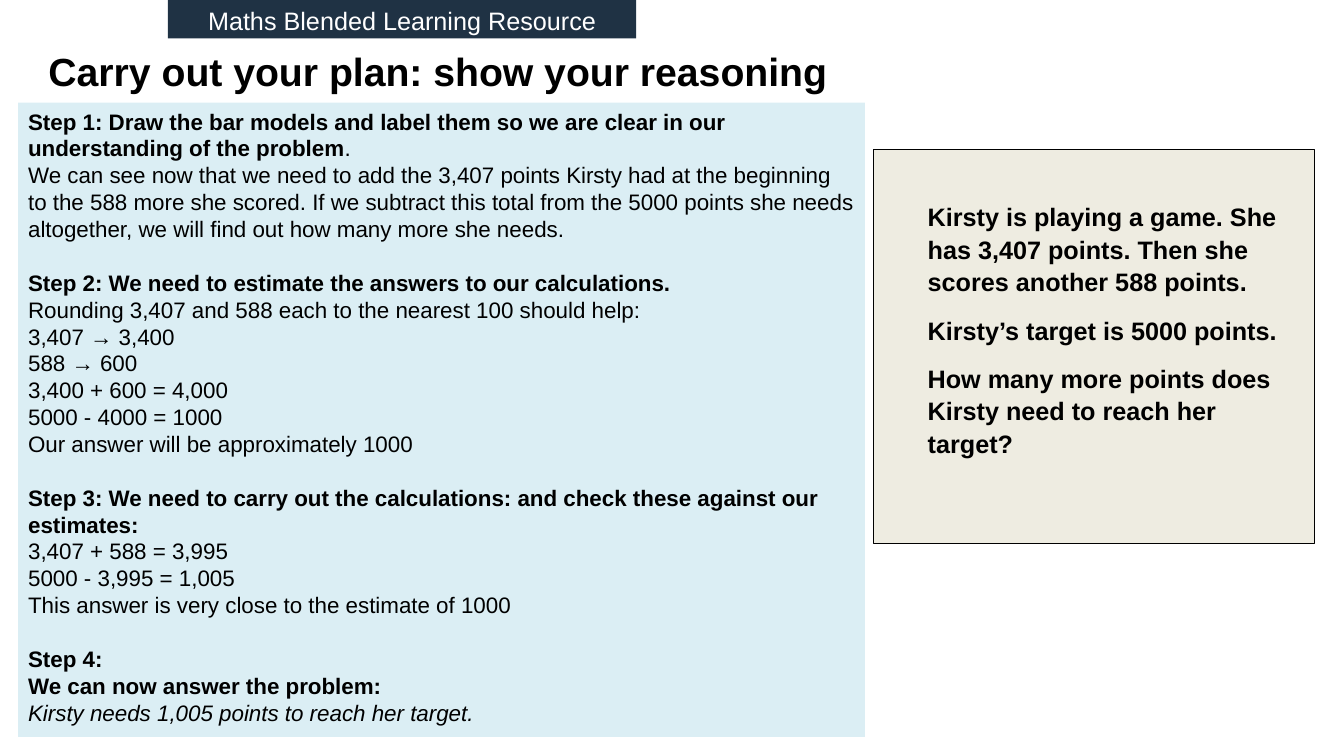
"""Build a worked-solution slide for a points word problem."""
from dataclasses import dataclass

from pptx import Presentation
from pptx import util as u
from pptx.dml.color import RGBColor
from pptx.enum import shapes, text


@dataclass(frozen=True)
class Theme:
    font: str = "Arial"
    ink: str = "000000"
    light: str = "FFFFFF"
    navy: str = "1F3244"
    sky: str = "DBEEF4"
    sand: str = "EEECE1"
    title: float = 28
    large: float = 18
    body: float = 16


STEPS = [
    [
        [("Step 1: Draw the bar models and label them so we are clear in our "
          "understanding of the problem", "bold"), (".", "")],
        [("We can see now that we need to add the 3,407 points Kirsty had at the "
          "beginning to the 588 more she scored. If we subtract this total from "
          "the 5000 points she needs altogether, we will find out how many more "
          "she needs.", "")],
    ],
    [
        [("Step 2: We need to estimate the answers to our calculations.", "bold")],
        [("Rounding 3,407 and 588 each to the nearest 100 should help:", "")],
        [("3,407 → 3,400", "")],
        [("588 → 600", "")],
        [("3,400 + 600 = 4,000", "")],
        [("5000 - 4000 = 1000", "")],
        [("Our answer will be approximately 1000", "")],
    ],
    [
        [("Step 3: We need to carry out the calculations: and check these against "
          "our estimates:", "bold")],
        [("3,407 + 588 = 3,995", "")],
        [("5000 - 3,995 = 1,005", "")],
        [("This answer is very close to the estimate of 1000", "")],
    ],
    [
        [("Step 4:", "bold")],
        [("We can now answer the problem:", "bold")],
        [("Kirsty needs 1,005 points to reach her target.", "italic")],
    ],
]

PROBLEM = [
    "Kirsty is playing a game. She has 3,407 points. Then she scores another 588 points.",
    "Kirsty’s target is 5000 points.",
    "How many more points does Kirsty need to reach her target?",
]


class SlideBuilder:
    def __init__(self, page, theme):
        self.page = page
        self.theme = theme

    def style(self, para, size, colour, bold=None):
        para.font.name = self.theme.font
        para.font.size = u.Pt(size)
        para.font.bold = bold
        para.font.color.rgb = RGBColor.from_string(colour)

    def title(self, words, left, top, width, height):
        box = self.page.shapes.title
        box.left, box.top, box.width, box.height = map(u.Pt, (left, top, width, height))
        frame = box.text_frame
        frame.text = words
        frame.auto_size = text.MSO_AUTO_SIZE.NONE
        frame.vertical_anchor = text.MSO_ANCHOR.MIDDLE
        para = frame.paragraphs[0]
        para.alignment = text.PP_ALIGN.LEFT
        self.style(para, self.theme.title, self.theme.ink, True)

    def panel(self, left, top, width, height, fill, outline=None):
        box = self.page.shapes.add_shape(
            shapes.MSO_SHAPE.RECTANGLE, *map(u.Pt, (left, top, width, height)))
        box.shadow.inherit = False
        box.fill.solid()
        box.fill.fore_color.rgb = RGBColor.from_string(fill)
        if outline:
            box.line.color.rgb = RGBColor.from_string(outline)
            box.line.width = u.Pt(0.75)
        else:
            box.line.fill.background()
        frame = box.text_frame
        frame.word_wrap = True
        frame.vertical_anchor = text.MSO_ANCHOR.TOP
        return frame

    def paragraph(self, frame, first):
        para = frame.paragraphs[0] if first else frame.add_paragraph()
        para.alignment = text.PP_ALIGN.LEFT
        return para

    def banner(self, words, *place):
        frame = self.panel(*place, self.theme.navy)
        para = self.paragraph(frame, True)
        para.text = words
        para.alignment = text.PP_ALIGN.CENTER
        self.style(para, self.theme.large, self.theme.light)

    def steps(self, groups, *place):
        frame = self.panel(*place, self.theme.sky)
        for number, group in enumerate(groups):
            for row, pieces in enumerate(group):
                para = self.paragraph(frame, number == row == 0)
                if number and row == 0:
                    para.space_before = u.Pt(1.2 * self.theme.body)
                self.style(para, self.theme.body, self.theme.ink)
                for words, emphasis in pieces:
                    span = para.add_run()
                    span.text = words
                    if emphasis == "bold":
                        span.font.bold = True
                    elif emphasis == "italic":
                        span.font.italic = True

    def problem(self, lines, *place):
        frame = self.panel(*place, self.theme.sand, self.theme.ink)
        frame.margin_left = u.Pt(38.9)
        frame.margin_top = u.Pt(35.5)
        for row, words in enumerate(lines):
            para = self.paragraph(frame, row == 0)
            para.text = words
            para.line_spacing = 1.07
            para.space_after = u.Pt(8)
            if row:
                para.space_before = u.Pt(3.6)
            self.style(para, self.theme.large, self.theme.ink, True)


def main():
    deck = Presentation()
    deck.slide_width, deck.slide_height = u.Pt(960), u.Pt(540)
    page = deck.slides.add_slide(deck.slide_layouts[5])
    builder = SlideBuilder(page, Theme())
    builder.title("Carry out your plan: show your reasoning", 27.4, 27.4, 648, 46)
    builder.steps(STEPS, 13, 73.4, 604.8, 452.9)
    builder.banner("Maths Blended Learning Resource", 120, 0, 334.5, 27.4)
    builder.problem(PROBLEM, 623.8, 107, 315.2, 281.4)
    deck.save("out.pptx")


if __name__ == "__main__":
    main()
